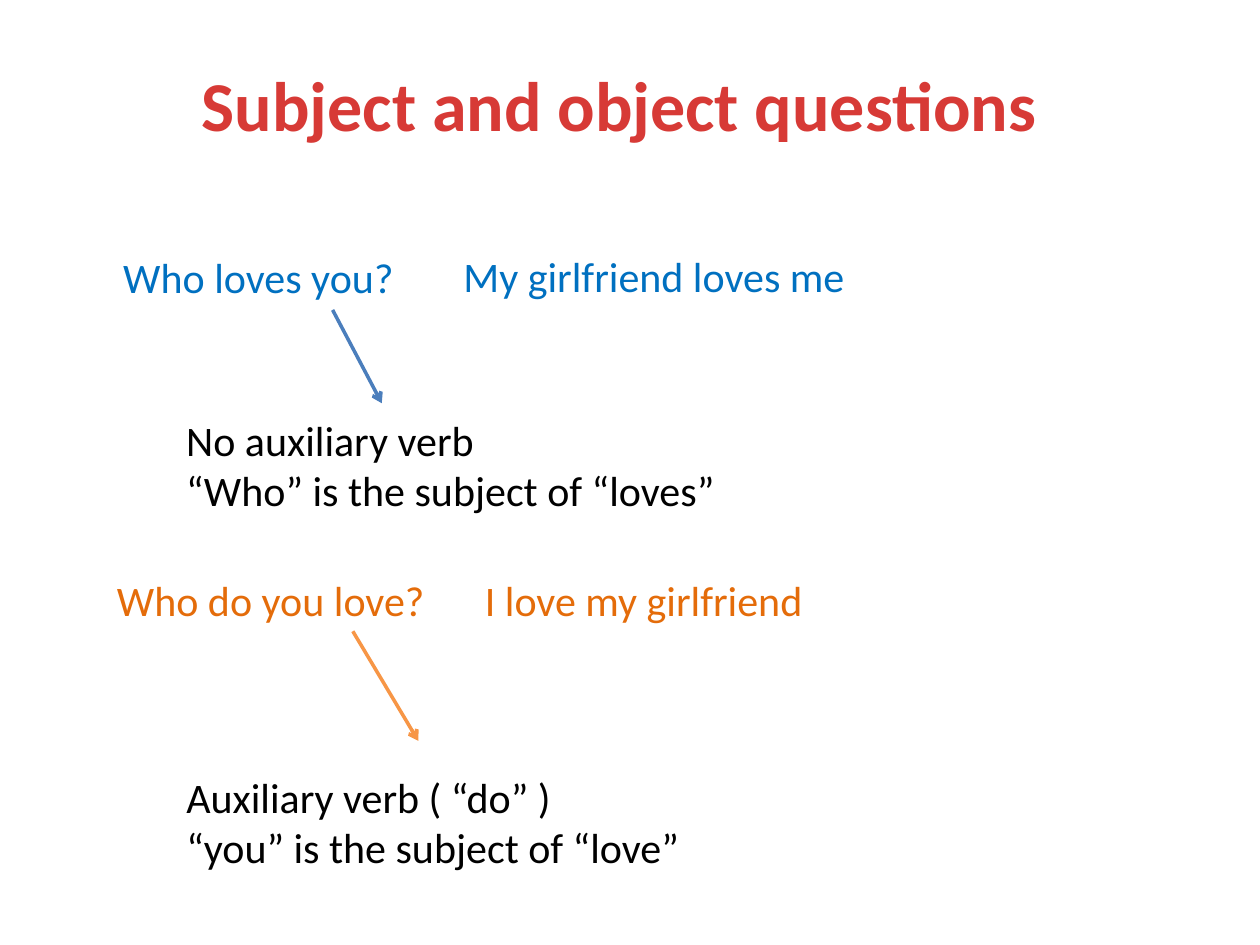
"""Build a grammar slide contrasting subject and object questions."""
from dataclasses import dataclass

import pptx
import pptx.dml.color
import pptx.enum.shapes
import pptx.enum.text
import pptx.oxml
import pptx.oxml.ns
import pptx.presentation
import pptx.shapes.base
import pptx.slide
import pptx.text.text
import pptx.util

WIDTH, HEIGHT = 10, 7.5
FONT = "Calibri"
RED, BLUE, ORANGE, BLACK = "D73A36", "0070C0", "E46C0A", "000000"
NOTE_LEFT = 0.138
LINE_HEIGHT, NOTE_HEIGHT = 0.067, 0.121


@dataclass(frozen=True)
class Box:
    """A rectangle in shares of the slide's width and height."""

    left: float
    top: float
    width: float
    height: float


@dataclass(frozen=True)
class Phrase:
    """Lines of text in one colour, placed in a box."""

    lines: tuple[str, ...]
    box: Box
    color: str


@dataclass(frozen=True)
class Arrow:
    """An arrow between two points in shares of the slide's size."""

    start: tuple[float, float]
    end: tuple[float, float]
    color: str


@dataclass(frozen=True)
class Example:
    """A question, its answer, and the note its arrow leads to."""

    question: Phrase
    answer: Phrase
    note: Phrase
    arrow: Arrow


TITLE = Phrase(("Subject and object questions",), Box(0.146, 0.059, 0.691, 0.103), RED)

EXAMPLES = (
    Example(
        Phrase(("Who loves you?",), Box(0.088, 0.26, 0.244, LINE_HEIGHT), BLUE),
        Phrase(("My girlfriend loves me",), Box(0.358, 0.258, 0.346, LINE_HEIGHT), BLUE),
        Phrase(
            ("No auxiliary verb", "“Who” is the subject of “loves”"),
            Box(NOTE_LEFT, 0.432, 0.496, NOTE_HEIGHT),
            BLACK,
        ),
        Arrow((0.264, 0.328), (0.303, 0.427), "4B7EBC"),
    ),
    Example(
        Phrase(("Who do you love?",), Box(0.083, 0.601, 0.276, LINE_HEIGHT), ORANGE),
        Phrase(("I love my girlfriend",), Box(0.375, 0.601, 0.346, LINE_HEIGHT), ORANGE),
        Phrase(
            ("Auxiliary verb ( “do” )", "“you” is the subject of “love”"),
            Box(NOTE_LEFT, 0.809, 0.441, NOTE_HEIGHT),
            BLACK,
        ),
        Arrow((0.28, 0.668), (0.332, 0.784), "F79646"),
    ),
)


def rgb(color: str) -> pptx.dml.color.RGBColor:
    """Turn a hex string into a colour."""
    return pptx.dml.color.RGBColor.from_string(color)


def across(share: float) -> int:
    """Turn a share of the slide's width into a length."""
    return pptx.util.Inches(round(share * WIDTH, 2))


def down(share: float) -> int:
    """Turn a share of the slide's height into a length."""
    return pptx.util.Inches(round(share * HEIGHT, 2))


def place(box: Box) -> tuple[int, int, int, int]:
    """Return a box as left, top, width and height."""
    return across(box.left), down(box.top), across(box.width), down(box.height)


def write(frame: pptx.text.text.TextFrame, phrase: Phrase, size: int, bold: bool) -> None:
    """Write each line of a phrase as a paragraph of one run."""
    for index, line in enumerate(phrase.lines):
        paragraph = frame.add_paragraph() if index else frame.paragraphs[0]
        run = paragraph.add_run()
        run.text = line
        run.font.name = FONT
        run.font.size = pptx.util.Pt(size)
        run.font.bold = bold
        run.font.color.rgb = rgb(phrase.color)


def draw_title(slide: pptx.slide.Slide) -> None:
    """Fill and move the title placeholder."""
    title = slide.shapes.title
    title.left, title.top, title.width, title.height = place(TITLE.box)
    title.text_frame.word_wrap = False
    write(title.text_frame, TITLE, 40, True)
    title.text_frame.paragraphs[0].alignment = pptx.enum.text.PP_ALIGN.CENTER


def draw_phrase(slide: pptx.slide.Slide, phrase: Phrase) -> None:
    """Add a text box holding a phrase."""
    frame = slide.shapes.add_textbox(*place(phrase.box)).text_frame
    frame.word_wrap = True
    frame.auto_size = pptx.enum.text.MSO_AUTO_SIZE.SHAPE_TO_FIT_TEXT
    write(frame, phrase, 24, False)


def draw_arrow(slide: pptx.slide.Slide, arrow: Arrow) -> None:
    """Add a connector with an open arrowhead and no shadow."""
    (start_x, start_y), (end_x, end_y) = arrow.start, arrow.end
    connector = slide.shapes.add_connector(
        pptx.enum.shapes.MSO_CONNECTOR.STRAIGHT,
        across(start_x), down(start_y), across(end_x), down(end_y),
    )
    connector.line.color.rgb = rgb(arrow.color)
    connector.line.width = pptx.util.Pt(2)
    head = pptx.oxml.parse_xml(f'<a:tailEnd {pptx.oxml.ns.nsdecls("a")} type="arrow"/>')
    connector.line._get_or_add_ln().append(head)
    effects = pptx.oxml.parse_xml(f'<a:effectLst {pptx.oxml.ns.nsdecls("a")}/>')
    connector._element.spPr.append(effects)


def main() -> None:
    """Build and save the slide."""
    deck = pptx.Presentation()
    deck.slide_width = pptx.util.Inches(WIDTH)
    deck.slide_height = pptx.util.Inches(HEIGHT)
    slide = deck.slides.add_slide(deck.slide_layouts.get_by_name("Title Only"))
    draw_title(slide)
    for example in EXAMPLES:
        for phrase in (example.question, example.answer, example.note):
            draw_phrase(slide, phrase)
        draw_arrow(slide, example.arrow)
    deck.save("out.pptx")


if __name__ == "__main__":
    main()
